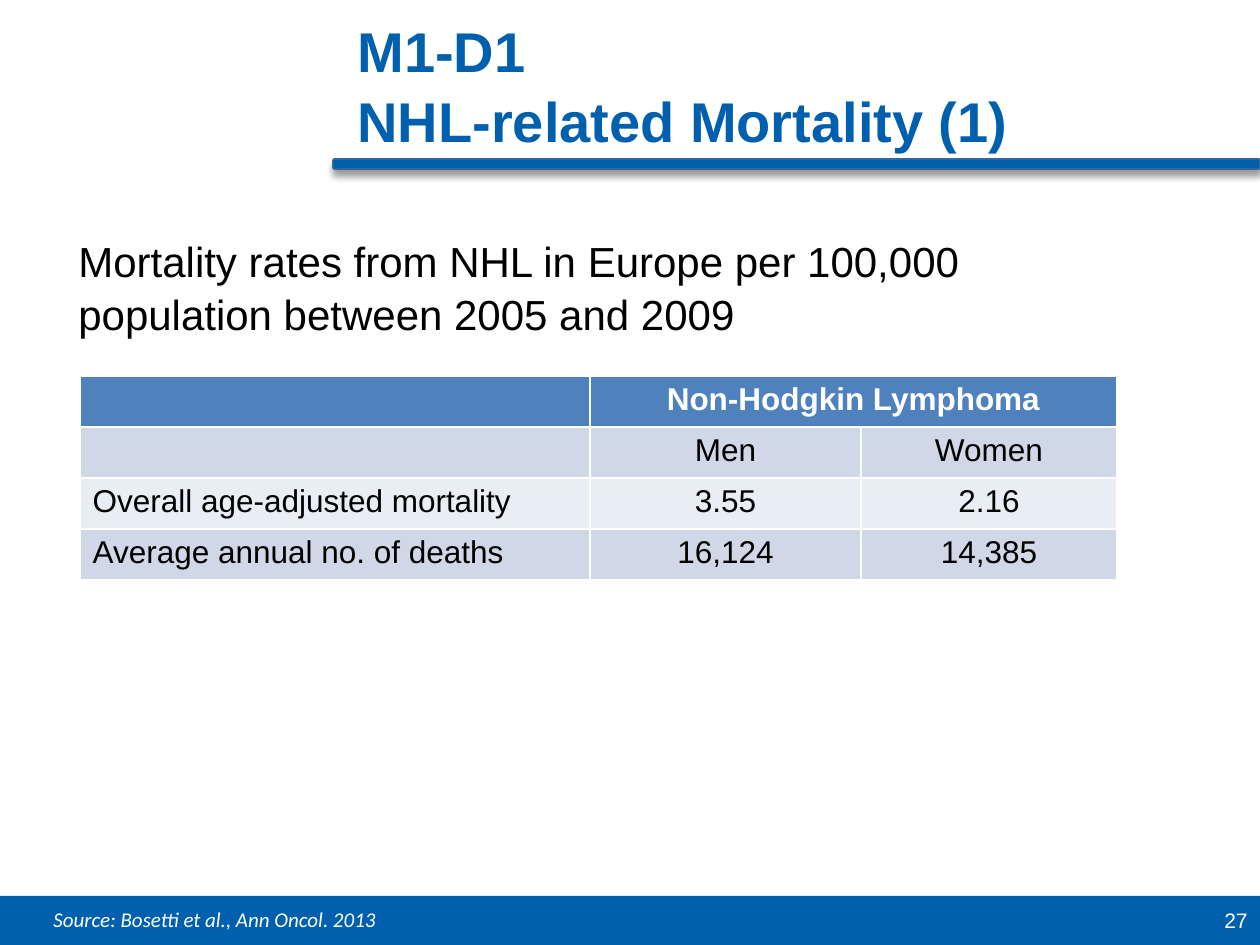
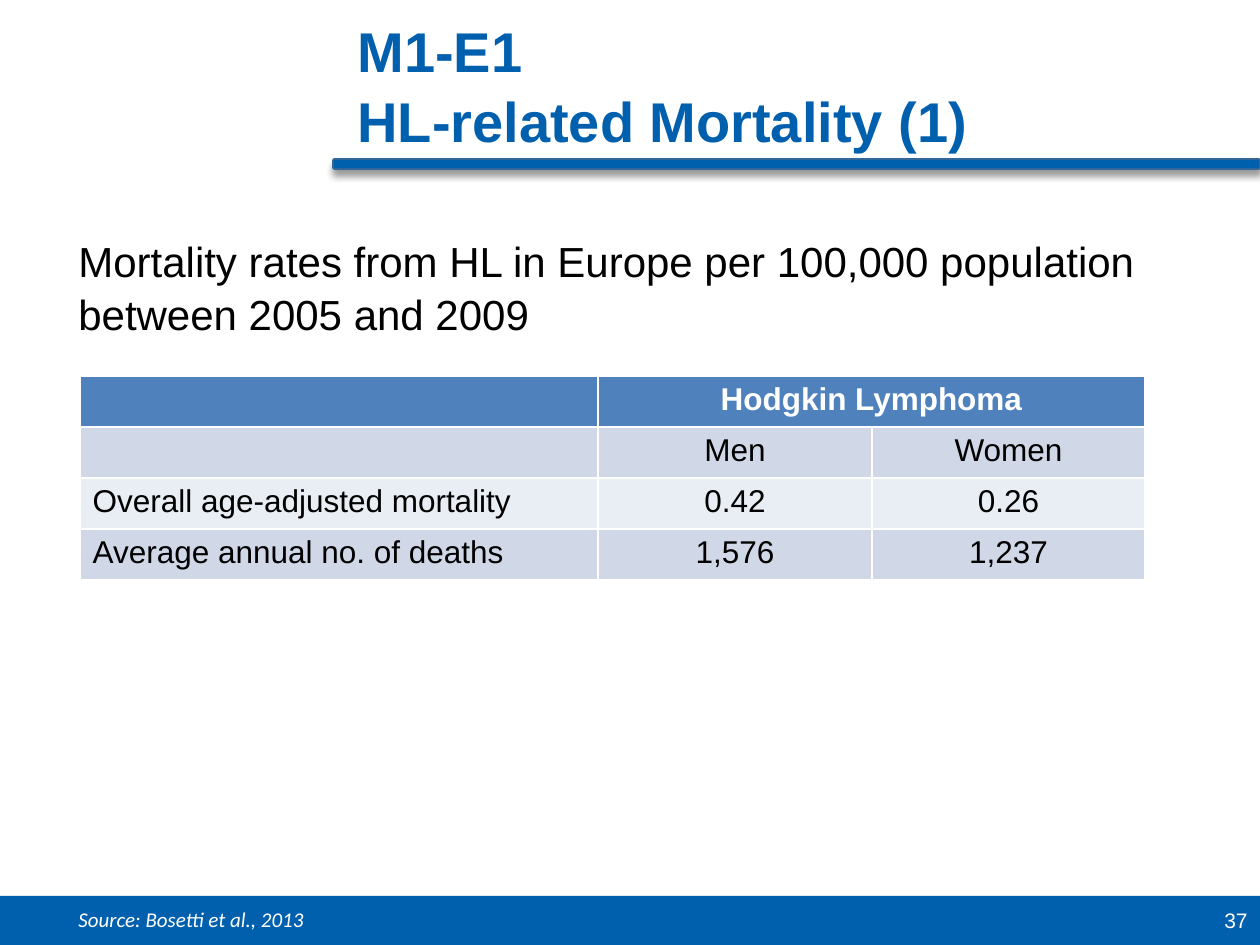
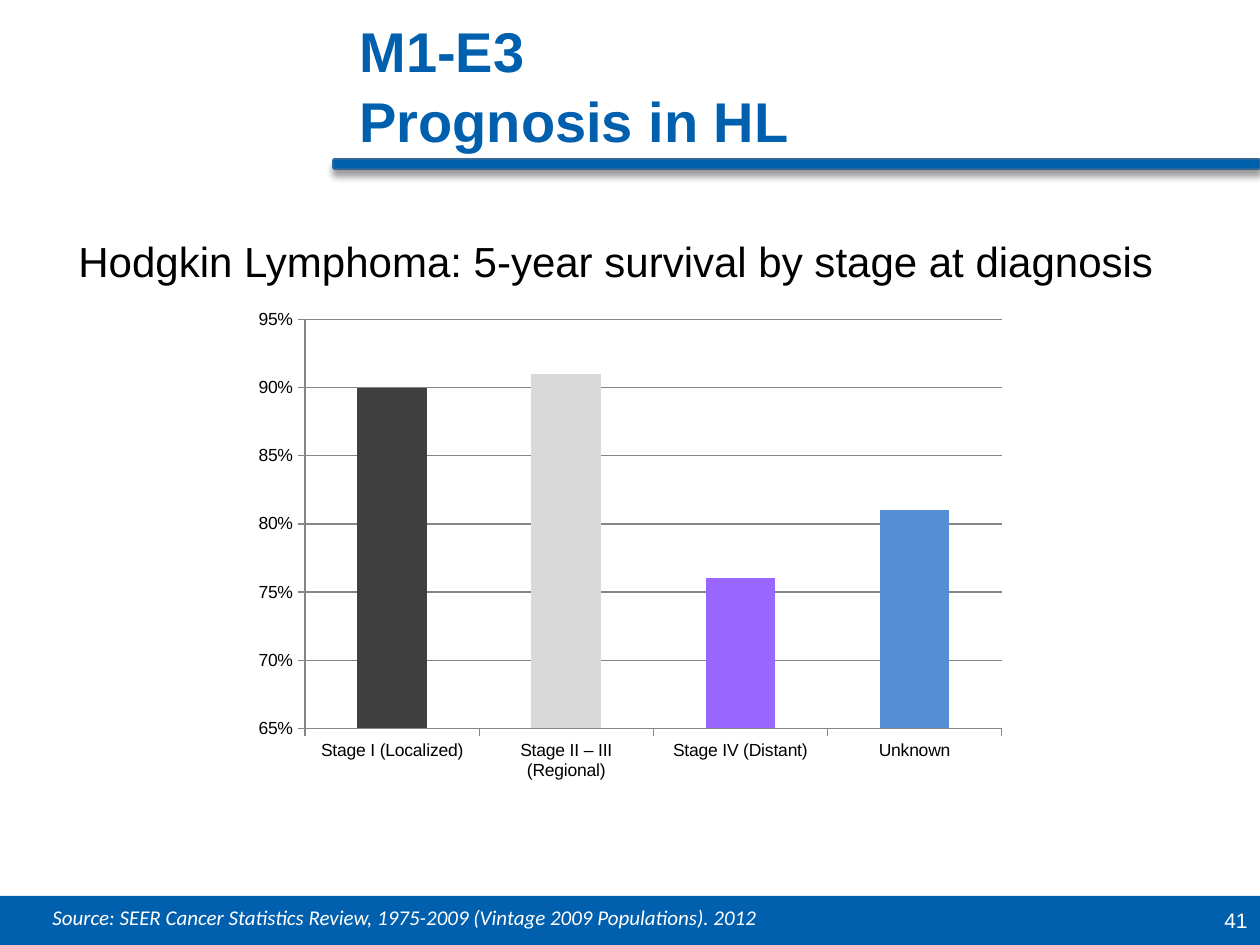
from lxml import etree
from pptx import Presentation
from pptx.chart.data import CategoryChartData as ChartData
from pptx.dml.color import RGBColor
from pptx.enum.chart import XL_CHART_TYPE as Kind, XL_TICK_MARK as Tick
from pptx.enum.shapes import MSO_SHAPE as Shape
from pptx.enum.text import MSO_ANCHOR as Anchor, PP_ALIGN as Align
from pptx.oxml import parse_xml
from pptx.util import Pt

W, H = 1260, 945
COLORS = {
    "brand": "0060AD", "edge": "336699", "white": "FFFFFF", "black": "000000",
    "head": "4F81BD", "dark": "D0D8E8", "light": "E9EDF4", "grid": "868686",
}
TITLE = {"size": 32, "bold": True, "color": "brand"}
BODY = {"size": 24}
CELL = {"size": 18, "bold": False}
HEAD = {"size": 18, "bold": True, "color": "white"}
PAGE = {"size": 12, "color": "white"}
SOURCE = {"size": 12, "color": "white", "italic": True, "name": "Calibri"}

LABELS = ["Overall age-adjusted mortality", "Average annual no. of deaths"]
SLIDES = [
    {
        "title": ["M1-D1", "NHL-related Mortality (1)"], "left": 345, "page": "27",
        "body": "Mortality rates from NHL in Europe per 100,000 population between 2005 and 2009",
        "area": (66, 227, 1084, 127),
        "source": "Source: Bosetti et al., Ann Oncol. 2013", "foot": (41, 900, 1154, 38),
        "table": {"name": "Non-Hodgkin Lymphoma", "cols": [510, 271, 256],
                  "vals": [["3.55", "2.16"], ["16,124", "14,385"]]},
    },
    {
        "title": ["M1-E1", "HL-related Mortality (1)"], "left": 345, "page": "37",
        "body": "Mortality rates from HL in Europe per 100,000 population between 2005 and 2009",
        "area": (66, 227, 1084, 127),
        "source": "Source: Bosetti et al., 2013", "foot": (66, 900, 1130, 38),
        "table": {"name": "Hodgkin Lymphoma", "cols": [518, 274, 273],
                  "vals": [["0.42", "0.26"], ["1,576", "1,237"]]},
    },
    {
        "title": ["M1-E3", "Prognosis in HL"], "left": 347, "page": "41",
        "body": "Hodgkin Lymphoma: 5-year survival by stage at diagnosis",
        "area": (66, 227, 1115, 71),
        "source": "Source: SEER Cancer Statistics Review, 1975-2009 (Vintage 2009 Populations). 2012",
        "foot": (40, 898, 1050, 38),
        "chart": [("Stage I (Localized)", 0.9, "404040"),
                  ("Stage II – III (Regional)", 0.91, "D9D9D9"),
                  ("Stage IV (Distant)", 0.76, "9966FF"),
                  ("Unknown", 0.81, "558ED5")],
    },
]
SHADOW = """<a:effectLst xmlns:a="http://schemas.openxmlformats.org/drawingml/2006/main">
<a:outerShdw blurRad="50800" dist="38100" dir="5400000" rotWithShape="0">
<a:srgbClr val="000000"><a:alpha val="40000"/></a:srgbClr></a:outerShdw></a:effectLst>"""


def px(n):
    return round(n * 914400 / 126)


def box(*area):
    return [px(n) for n in area]


def rgb(name):
    return RGBColor.from_string(COLORS.get(name, name))


def style(font, size, color="black", name="Arial", **more):
    font.color.rgb = rgb(color)
    for key, val in {"size": Pt(size), "name": name, **more}.items():
        setattr(font, key, val)


def write(frame, text, form, align=Align.LEFT):
    frame.text = text
    for para in frame.paragraphs:
        para.alignment = align
        for run in para.runs:
            style(run.font, **form)


def label(slide, area, text, form, align=Align.LEFT, anchor=Anchor.TOP, pitch=None):
    frame = slide.shapes.add_textbox(*box(*area)).text_frame
    frame.word_wrap = True
    frame.vertical_anchor = anchor
    write(frame, text, form, align)
    frame.paragraphs[0].line_spacing = pitch


def block(slide, kind, area):
    shape = slide.shapes.add_shape(kind, *box(*area))
    shape.shadow.inherit = False
    shape.fill.solid()
    shape.fill.fore_color.rgb = rgb("brand")
    shape.line.fill.background()
    return shape


def frame_slide(slide, data):
    """Draw the footer band, page number, title rule, title, body and source."""
    block(slide, Shape.RECTANGLE, (0, 896, W, 49))
    label(slide, (966, 896, 294, 49), data["page"], PAGE, Align.RIGHT, Anchor.MIDDLE)
    rule = block(slide, Shape.ROUNDED_RECTANGLE, (333, 159, W - 333, 10))
    rule.line.color.rgb = rgb("edge")
    rule.line.width = Pt(1)
    props = rule.fill._xPr
    props.replace(props.find("{*}effectLst"), parse_xml(SHADOW))
    left = data["left"]
    label(slide, (left, 21, W - left, 125), "\v".join(data["title"]), TITLE,
          anchor=Anchor.MIDDLE, pitch=1.05)
    label(slide, data["area"], data["body"], BODY, pitch=1.05)
    label(slide, data["foot"], data["source"], SOURCE)


def add_rates(slide, data):
    cols, tall = data["cols"], 51
    rows = [["", data["name"], ""], ["", "Men", "Women"]]
    rows += [[name, *vals] for name, vals in zip(LABELS, data["vals"])]
    area = box(80, 376, sum(cols), tall * len(rows))
    table = slide.shapes.add_table(len(rows), len(cols), *area).table
    for col, wide in zip(table.columns, cols):
        col.width = px(wide)
    table.cell(0, 1).merge(table.cell(0, 2))
    fills = ["head", "dark", "light", "dark"]
    for r, row in enumerate(rows):
        table.rows[r].height = px(tall)
        for c, text in enumerate(row):
            cell = table.cell(r, c)
            cell.fill.solid()
            cell.fill.fore_color.rgb = rgb(fills[r])
            if text:
                write(cell.text_frame, text, CELL if r else HEAD,
                      Align.CENTER if c else Align.LEFT)


def add_bars(slide, points):
    names, vals, hues = zip(*points)
    data = ChartData(number_format="0%")
    data.categories = names
    data.add_series("Series 1", vals)
    chart = slide.shapes.add_chart(
        Kind.COLUMN_CLUSTERED, *box(243, 300, 774, 490), data).chart
    chart.has_legend = chart.has_title = False
    style(chart.font, 10)
    plot = chart.plots[0]
    plot.gap_width = 150
    plot.vary_by_categories = False
    bars = plot.series[0]
    bars.format.fill.solid()
    bars.format.fill.fore_color.rgb = rgb("head")
    for i, hue in enumerate(hues):
        fill = bars.points[i].format.fill
        fill.solid()
        fill.fore_color.rgb = rgb(hue)
    axis = chart.value_axis
    for key, val in {"minimum_scale": 0.65, "maximum_scale": 0.95, "major_unit": 0.05,
                     "has_major_gridlines": True}.items():
        setattr(axis, key, val)
    axis.tick_labels.number_format = "0%"
    axis.tick_labels.number_format_is_linked = False
    chart.category_axis.major_tick_mark = axis.major_tick_mark = Tick.OUTSIDE
    for part in (axis, axis.major_gridlines, chart.category_axis):
        part.format.line.color.rgb = rgb("grid")
        part.format.line.width = Pt(0.75)


def main():
    deck = Presentation()
    deck.slide_width, deck.slide_height = px(W), px(H)
    for data in SLIDES:
        slide = deck.slides.add_slide(deck.slide_layouts[6])
        frame_slide(slide, data)
        if "table" in data:
            add_rates(slide, data["table"])
        if "chart" in data:
            add_bars(slide, data["chart"])
    deck.save("out.pptx")


if __name__ == "__main__":
    main()
